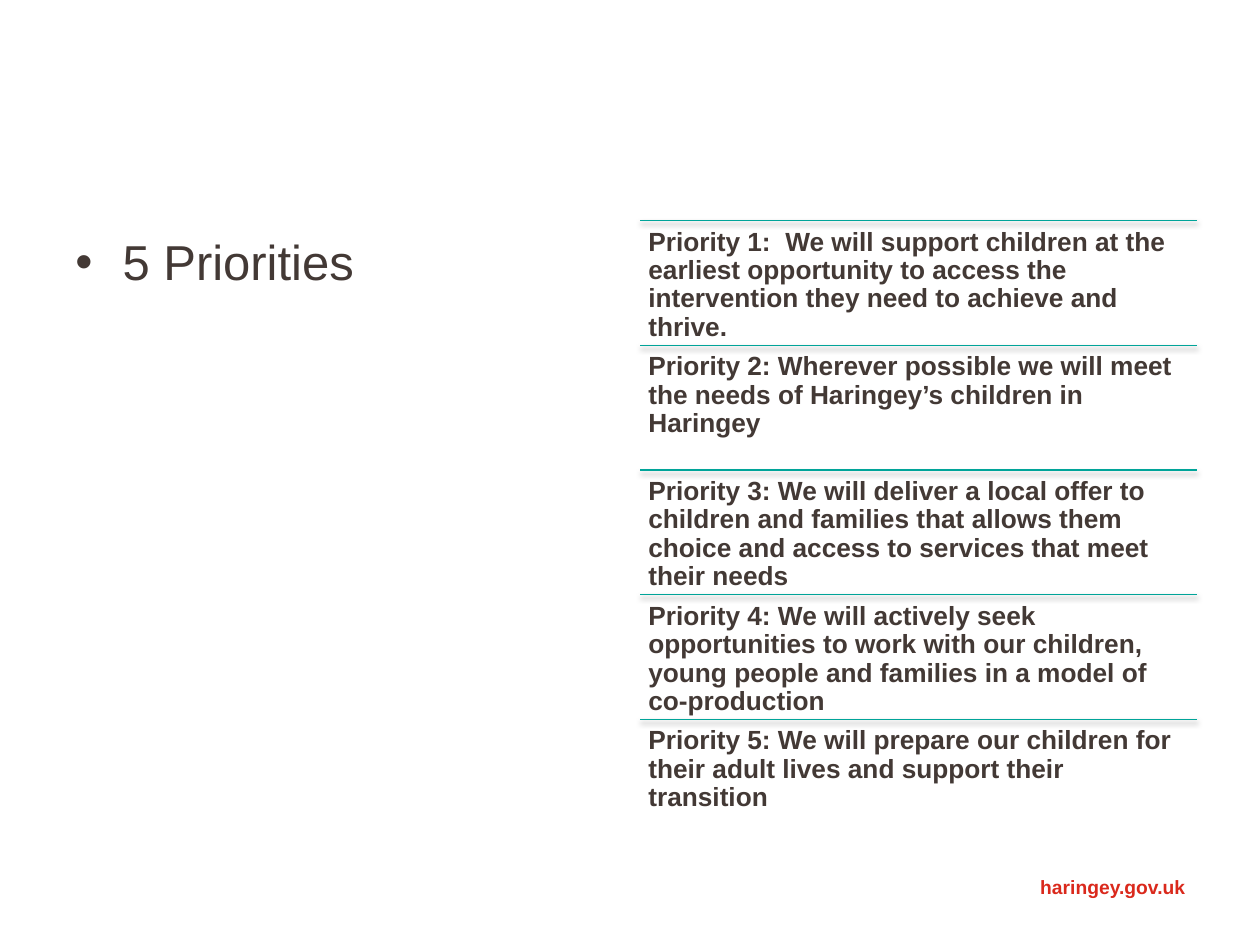
from lxml import etree
from pptx import Presentation
from pptx.dml.color import RGBColor
from pptx.enum.shapes import MSO_CONNECTOR
from pptx.enum.text import PP_ALIGN
from pptx.oxml import parse_xml
from pptx.oxml.ns import nsdecls, qn
from pptx.util import Pt

SHADOW = f"""<a:effectLst {nsdecls('a')}>
  <a:outerShdw blurRad="{Pt(3.1)}" dist="{Pt(1.8)}" dir="5400000" rotWithShape="0">
    <a:srgbClr val="000000"><a:alpha val="35000"/></a:srgbClr>
  </a:outerShdw>
</a:effectLst>"""


def rgb(value):
    return RGBColor.from_string(value)


def add_text(s, text, left, top, width, height, size, color, bold=False):
    tf = s.shapes.add_textbox(Pt(left), Pt(top), Pt(width), Pt(height)).text_frame
    tf.word_wrap = True
    tf.text = text
    font = tf.paragraphs[0].runs[0].font
    font.name, font.size, font.bold = "Arial", Pt(size), bold
    font.color.rgb = rgb(color)
    return tf


prs = Presentation()
prs.slide_width, prs.slide_height = Pt(720), Pt(540)
s = prs.slides.add_slide(prs.slide_layouts[6])

# Bulleted heading on the left
tf = add_text(s, "5 Priorities", 36, 126, 318, 356.4, 28, "433935")
tf.margin_top = Pt(6.4)
pPr = tf.paragraphs[0]._p.get_or_add_pPr()
pPr.set("marL", str(Pt(27)))
pPr.set("indent", str(-Pt(27)))
etree.SubElement(pPr, qn("a:buFont")).set("typeface", "Arial")
etree.SubElement(pPr, qn("a:buChar")).set("char", "•")

# Web address at the foot
tf = add_text(s, "haringey.gov.uk", 456.5, 496.8, 228, 28.8, 11, "DA291C", True)
p = tf.paragraphs[0]
p.alignment = PP_ALIGN.RIGHT
p.space_after = Pt(6)

# Priorities on the right, each under a rule
priorities = [
    "Priority 1:  We will support children at the earliest opportunity to access "
    "the intervention they need to achieve and thrive.",
    "Priority 2: Wherever possible we will meet the needs of Haringey’s children "
    "in Haringey",
    "Priority 3: We will deliver a local offer to children and families that "
    "allows them choice and access to services that meet their needs",
    "Priority 4: We will actively seek opportunities to work with our children, "
    "young people and families in a model of co-production",
    "Priority 5: We will prepare our children for their adult lives and support "
    "their transition",
]
left, width, row_height = 366, 318, 71.28

for i, text in enumerate(priorities):
    top = 126 + i * row_height
    line = s.shapes.add_connector(
        MSO_CONNECTOR.STRAIGHT, Pt(left), Pt(top), Pt(left + width), Pt(top))
    line.line.color.rgb = rgb("00A499")
    line.line.width = Pt(0.75)
    line._element.spPr.append(parse_xml(SHADOW))

    tf = add_text(s, text, left, top, width, row_height, 15, "433935", True)
    tf.margin_left = tf.margin_right = tf.margin_top = tf.margin_bottom = Pt(4.5)
    p = tf.paragraphs[0]
    p.line_spacing = 0.9
    p.space_after = Pt(5.25)

prs.save("out.pptx")
